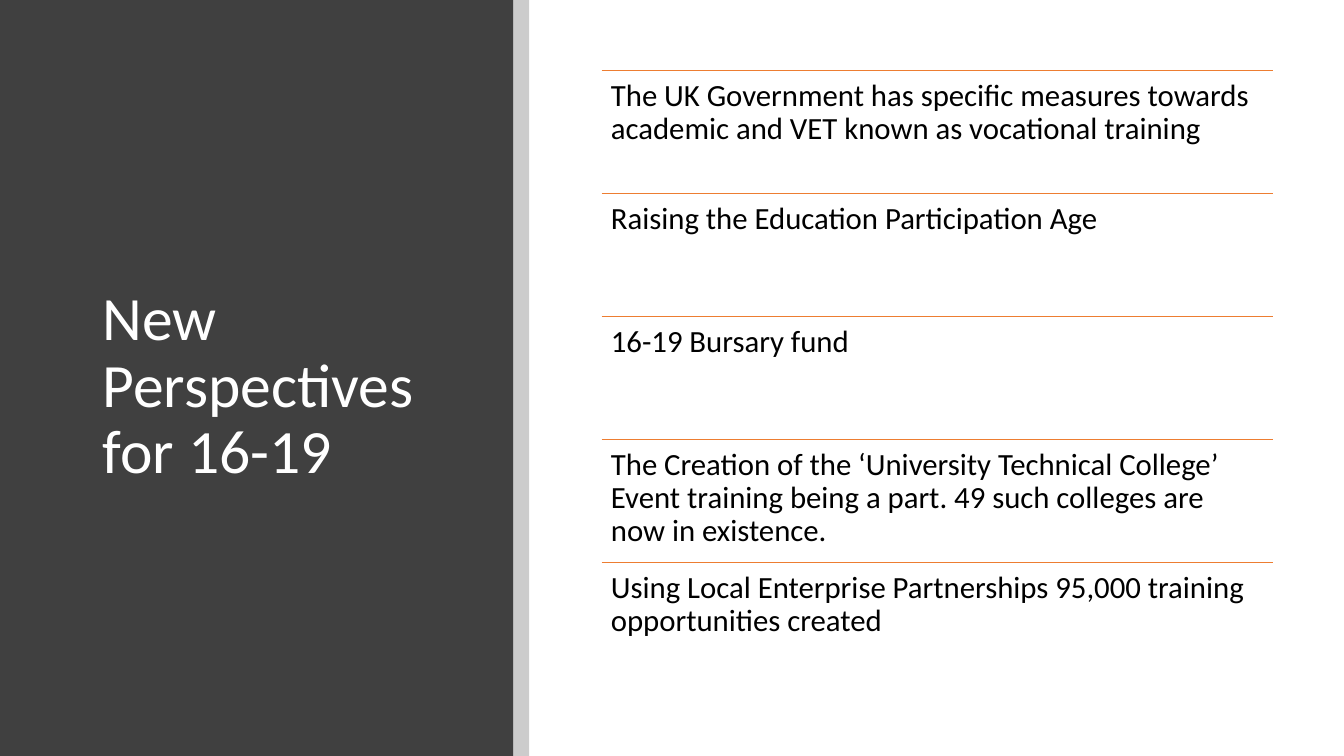
from dataclasses import dataclass

from lxml import etree
from pptx import Presentation
from pptx.dml.color import RGBColor
from pptx.enum.shapes import MSO_CONNECTOR, MSO_SHAPE
from pptx.enum.text import MSO_ANCHOR, MSO_AUTO_SIZE, PP_ALIGN
from pptx.oxml.ns import qn
from pptx.shapes.group import GroupShape
from pptx.slide import Slide
from pptx.text.text import TextFrame
from pptx.util import Pt

RECTANGLE = MSO_SHAPE.RECTANGLE
STRAIGHT = MSO_CONNECTOR.STRAIGHT
TOP, MIDDLE = MSO_ANCHOR.TOP, MSO_ANCHOR.MIDDLE
NO_AUTOFIT = MSO_AUTO_SIZE.NONE
LEFT = PP_ALIGN.LEFT

WHITE = RGBColor(0xFF, 0xFF, 0xFF)
BLACK = RGBColor(0x00, 0x00, 0x00)
CHARCOAL = RGBColor(0x40, 0x40, 0x40)
ORANGE = RGBColor(0xED, 0x7D, 0x31)

FONT = "Calibri"
SLIDE_WIDTH, SLIDE_HEIGHT = 960, 540
ROW_LEFT, ROW_TOP = 429.8, 50.4
ROW_WIDTH, ROW_HEIGHT = 479.5, 87.84
ROW_INSET = 6.6
TITLE_TEXT = "New Perspectives for 16-19"


@dataclass(frozen=True)
class Panel:
    left: float
    width: float
    color: RGBColor
    opacity: int


PANELS = (
    Panel(0, 366.5, CHARCOAL, 100),
    Panel(366.5, 11.5, BLACK, 20),
)

MEASURES = (
    "The UK Government has specific measures towards academic and VET known as vocational training",
    "Raising the Education Participation Age",
    "16-19 Bursary fund",
    "The Creation of the ‘University Technical College’ Event training being a part. "
    "49 such colleges are now in existence.",
    "Using Local Enterprise Partnerships 95,000 training opportunities created",
)


def write_text(frame: TextFrame, text: str, size: float, color: RGBColor, anchor: MSO_ANCHOR) -> None:
    frame.text = text
    frame.word_wrap = True
    frame.auto_size = NO_AUTOFIT
    frame.vertical_anchor = anchor
    paragraph = frame.paragraphs[0]
    paragraph.alignment = LEFT
    paragraph.line_spacing = 0.9
    font = paragraph.runs[0].font
    font.name = FONT
    font.size = Pt(size)
    font.color.rgb = color


def draw_panel(slide: Slide, panel: Panel) -> None:
    shape = slide.shapes.add_shape(RECTANGLE, Pt(panel.left), 0, Pt(panel.width), Pt(SLIDE_HEIGHT))
    shape.shadow.inherit = False
    shape.line.fill.background()
    shape.fill.solid()
    shape.fill.fore_color.rgb = panel.color
    if panel.opacity < 100:
        color = shape.element.spPr.find(qn("a:solidFill")).find(qn("a:srgbClr"))
        etree.SubElement(color, qn("a:alpha"), val=str(panel.opacity * 1000))


def draw_title(slide: Slide) -> None:
    title = slide.shapes.title
    title.left, title.top = Pt(66.2), Pt(64)
    title.width, title.height = Pt(262.8), Pt(425.5)
    write_text(title.text_frame, TITLE_TEXT, 44, WHITE, MIDDLE)
    title.element.getparent().append(title.element)


def draw_measure(group: GroupShape, top: float, text: str) -> None:
    rule = group.shapes.add_connector(
        STRAIGHT, Pt(ROW_LEFT), Pt(top), Pt(ROW_LEFT + ROW_WIDTH), Pt(top)
    )
    rule.line.color.rgb = ORANGE
    rule.line.width = Pt(0.5)
    etree.SubElement(rule.element.spPr, qn("a:effectLst"))

    box = group.shapes.add_textbox(Pt(ROW_LEFT), Pt(top), Pt(ROW_WIDTH), Pt(ROW_HEIGHT))
    frame = box.text_frame
    frame.margin_left = frame.margin_right = Pt(ROW_INSET)
    frame.margin_top = frame.margin_bottom = Pt(ROW_INSET)
    write_text(frame, text, 22, BLACK, TOP)


def main() -> None:
    presentation = Presentation()
    presentation.slide_width = Pt(SLIDE_WIDTH)
    presentation.slide_height = Pt(SLIDE_HEIGHT)
    slide = presentation.slides.add_slide(presentation.slide_layouts.get_by_name("Title Only"))
    slide.background.fill.solid()
    slide.background.fill.fore_color.rgb = WHITE

    for panel in PANELS:
        draw_panel(slide, panel)
    draw_title(slide)
    measures = slide.shapes.add_group_shape()
    for index, text in enumerate(MEASURES):
        draw_measure(measures, ROW_TOP + index * ROW_HEIGHT, text)

    presentation.save("out.pptx")


if __name__ == "__main__":
    main()
